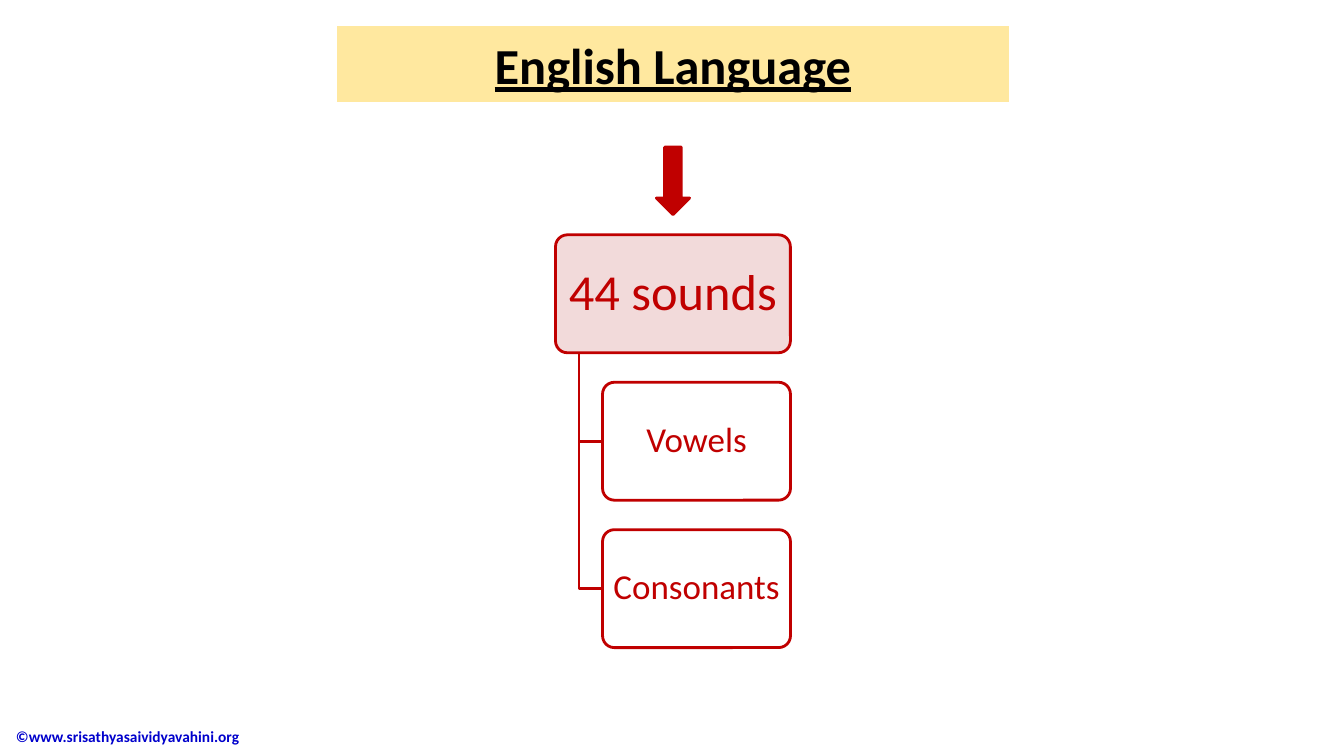
from pptx import Presentation
from pptx import util as u
from pptx.dml.color import RGBColor
from pptx.enum import shapes, text

# Content
TITLE = "English Language"
ROOT = "44 sounds"
BRANCHES = ["Vowels", "Consonants"]
COPYRIGHT = "©www.srisathyasaividyavahini.org"

COLORS = {"banner": "FFE89F", "title": "000000", "red": "C00000",
          "root": "F2DADA", "branch": "FFFFFF", "copyright": "0000CC"}
FONT = "Calibri"

# Layout in inches: the tree is built from the root box size
SLIDE_W, SLIDE_H = 13.33, 7.5
CENTER = SLIDE_W / 2 + 0.01
BANNER_W, BANNER_H = SLIDE_W / 2, SLIDE_H / 10
ROOT_W, BOX_H = 2.33, 1.17
ROOT_LEFT, ROOT_TOP = CENTER - ROOT_W / 2, 2.33
INDENT = ROOT_W / 10
BRANCH_LEFT = ROOT_LEFT + 2 * INDENT
BRANCH_W = ROOT_W - 2 * INDENT
ROW_STEP = BOX_H * 1.25
ARROW_W, ARROW_H = 0.33, 0.67

prs = Presentation()
prs.slide_width, prs.slide_height = u.Inches(SLIDE_W), u.Inches(SLIDE_H)
slide = prs.slides.add_slide(prs.slide_layouts[6])


def color(name):
    return RGBColor.from_string(COLORS[name])


def outline(shape):
    shape.shadow.inherit = False
    shape.line.color.rgb = color("red")
    shape.line.width = u.Pt(2)


def add_shape(kind, left, top, width, height, fill):
    shape = slide.shapes.add_shape(kind, *map(u.Inches, (left, top, width, height)))
    shape.shadow.inherit = False
    shape.fill.solid()
    shape.fill.fore_color.rgb = color(fill)
    return shape


def write(shape, words, size, ink, bold=False, underline=False,
          align=text.PP_ALIGN.CENTER, inset=0.05):
    frame = shape.text_frame
    frame.word_wrap = True
    frame.vertical_anchor = text.MSO_ANCHOR.MIDDLE
    frame.margin_left = frame.margin_right = u.Inches(inset)
    line = frame.paragraphs[0]
    line.text = words
    line.alignment = align
    font = line.font
    font.name, font.size, font.bold, font.underline = FONT, u.Pt(size), bold, underline
    font.color.rgb = color(ink)


def add_node(words, left, top, width, fill, size):
    node = add_shape(shapes.MSO_SHAPE.ROUNDED_RECTANGLE, left, top, width, BOX_H, fill)
    node.adjustments[0] = 0.1
    outline(node)
    write(node, words, size, "red")
    node.text_frame.paragraphs[0].line_spacing = 0.9


# Copyright line
footer = slide.shapes.add_textbox(*map(u.Inches, (0.06, 7.1, 3.53, 0.41)))
write(footer, COPYRIGHT, 11, "copyright", bold=True,
      align=text.PP_ALIGN.LEFT, inset=0.1)

# Title banner
banner = add_shape(shapes.MSO_SHAPE.RECTANGLE, CENTER - BANNER_W / 2, 0.26,
                   BANNER_W, BANNER_H, "banner")
banner.line.fill.background()
write(banner, TITLE, 36, "title", bold=True, underline=True)

# Root of the tree
add_node(ROOT, ROOT_LEFT, ROOT_TOP, ROOT_W, "root", 36)

# Branches, each with an elbow from the bottom of the root
trunk_x, trunk_top = ROOT_LEFT + INDENT, ROOT_TOP + BOX_H
for row, branch in enumerate(BRANCHES, start=1):
    top = ROOT_TOP + row * ROW_STEP
    middle = top + BOX_H / 2
    elbow = slide.shapes.build_freeform(u.Inches(trunk_x), u.Inches(trunk_top))
    elbow.add_line_segments([(u.Inches(trunk_x), u.Inches(middle)),
                             (u.Inches(BRANCH_LEFT), u.Inches(middle))], close=False)
    link = elbow.convert_to_shape()
    link.fill.background()
    outline(link)
    add_node(branch, BRANCH_LEFT, top, BRANCH_W, "branch", 25)

# Arrow from the title to the tree
arrow = add_shape(shapes.MSO_SHAPE.DOWN_ARROW, CENTER - ARROW_W / 2, 1.46,
                  ARROW_W, ARROW_H, "red")
outline(arrow)

prs.save("out.pptx")
